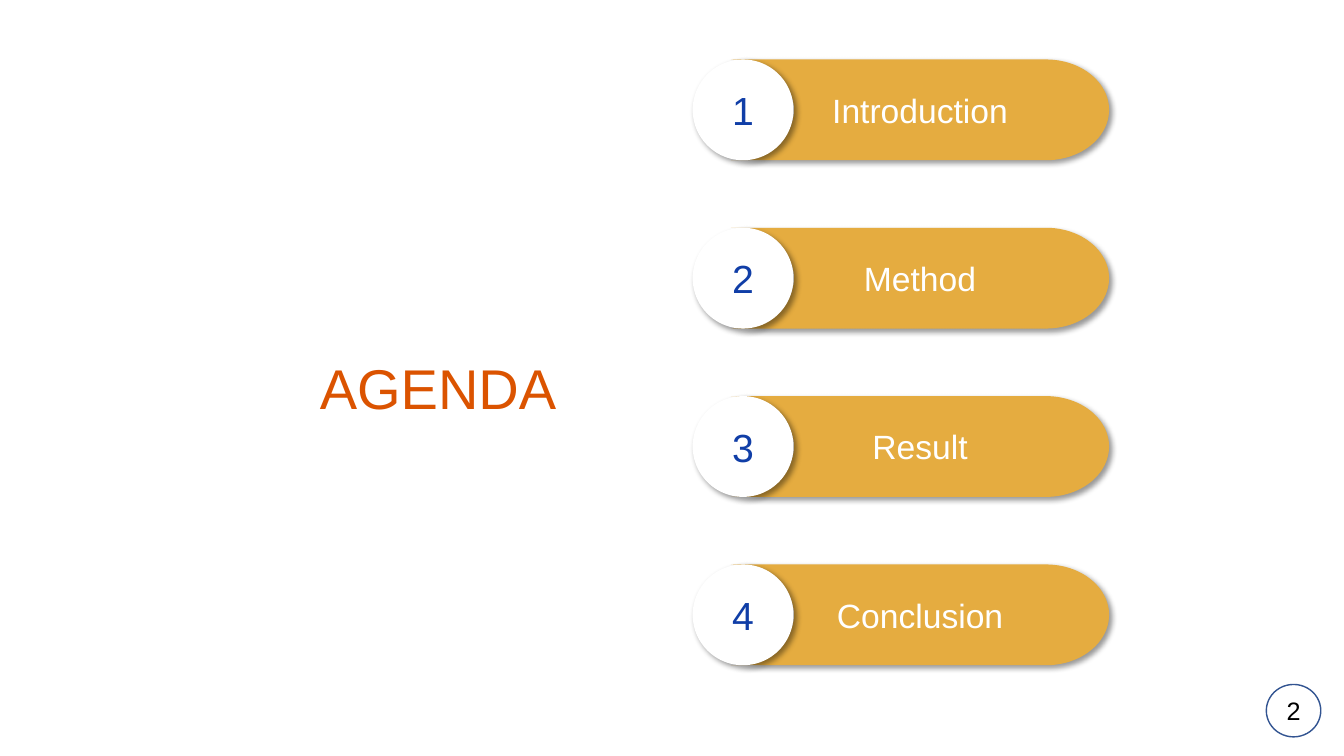
from lxml import etree
from pptx import Presentation
from pptx import util as u
from pptx.dml.color import RGBColor
from pptx.enum import shapes, text
from pptx.oxml.ns import qn

HEADING = "AGENDA"
TOPICS = ["Introduction", "Method", "Result", "Conclusion"]
PAGE = "2"

WIDTH, HEIGHT = 13.33, 7.5
FIRST_TOP, ROW_STEP, ROW_HEIGHT = 0.59, 1.67, 1
NUMBER_LEFT = 6.87
TOPIC_LEFT, TOPIC_WIDTH = 7.25, 3.75
WHITE, GOLD, BLUE, ORANGE = "FFFFFF", "E5AC40", "103EA7", "DB5300"


def color(value):
    return RGBColor.from_string(value)


def style(paragraph, size, ink):
    paragraph.alignment = text.PP_ALIGN.CENTER
    font = paragraph.runs[0].font
    font.name, font.size, font.color.rgb = "Arial", u.Pt(size), color(ink)


def add_label(slide, kind, box, fill, words, size, ink):
    label = slide.shapes.add_shape(kind, *map(u.Inches, box))
    label.shadow.inherit = False
    label.fill.solid()
    label.fill.fore_color.rgb = color(fill)
    label.line.fill.background()
    label.text_frame.text = words
    label.text_frame.vertical_anchor = text.MSO_ANCHOR.MIDDLE
    style(label.text_frame.paragraphs[0], size, ink)
    return label


def cast_shadow(label):
    effects = label.element.spPr.find(qn("a:effectLst"))
    shadow = etree.SubElement(
        effects, qn("a:outerShdw"), blurRad=str(u.Pt(4)), dist=str(u.Pt(3)),
        dir=str(45 * 60000), algn="tl", rotWithShape="0")
    black = etree.SubElement(shadow, qn("a:srgbClr"), val="000000")
    etree.SubElement(black, qn("a:alpha"), val="40000")


def add_heading(slide):
    heading = slide.shapes.title
    heading.left, heading.top = u.Inches(3.03), u.Inches(3.18)
    heading.width, heading.height = u.Inches(2.63), u.Inches(0.94)
    frame = heading.text_frame
    frame.text = HEADING
    frame.word_wrap = False
    frame.auto_size = text.MSO_AUTO_SIZE.SHAPE_TO_FIT_TEXT
    frame.vertical_anchor = text.MSO_ANCHOR.TOP
    frame.paragraphs[0].line_spacing = u.Pt(68.3)
    style(frame.paragraphs[0], 40, ORANGE)


def add_topic(slide, row, words):
    top = FIRST_TOP + row * ROW_STEP
    topic = add_label(slide, shapes.MSO_SHAPE.FLOWCHART_STORED_DATA,
                      (TOPIC_LEFT, top, TOPIC_WIDTH, ROW_HEIGHT),
                      GOLD, words, 24, WHITE)
    topic.element.spPr.find(qn("a:xfrm")).set("flipH", "1")
    number = add_label(slide, shapes.MSO_SHAPE.OVAL,
                       (NUMBER_LEFT, top, ROW_HEIGHT, ROW_HEIGHT),
                       WHITE, str(row + 1), 28, BLUE)
    for label in (topic, number):
        cast_shadow(label)


def add_page_number(slide):
    page = add_label(slide, shapes.MSO_SHAPE.OVAL, (12.56, 6.79, 0.54, 0.52),
                     WHITE, PAGE, 18, "000000")
    page.line.color.rgb = color("325491")
    page.line.width = u.Pt(1)


def main():
    deck = Presentation()
    deck.slide_width, deck.slide_height = u.Inches(WIDTH), u.Inches(HEIGHT)
    slide = deck.slides.add_slide(deck.slide_layouts.get_by_name("Title Only"))
    add_heading(slide)
    add_page_number(slide)
    for row, words in enumerate(TOPICS):
        add_topic(slide, row, words)
    deck.save("out.pptx")


if __name__ == "__main__":
    main()
